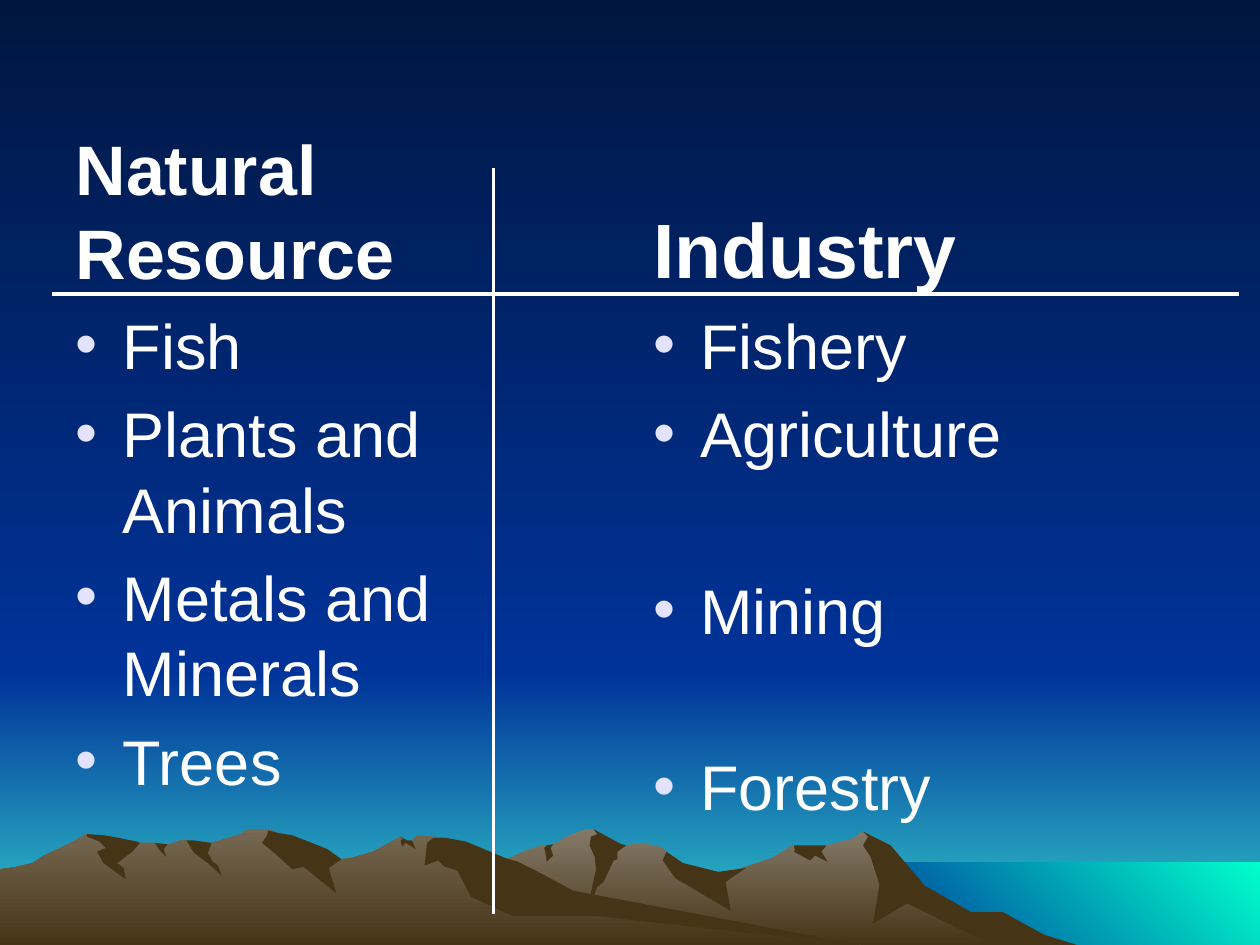
import pptx
import pptx.util
import pptx.dml.color
import pptx.enum.shapes
import pptx.enum.text
import pptx.oxml
import lxml.etree

Pt = pptx.util.Pt
WIDE, HIGH = 720, 540
ROCK = "463416"
UNIT = 0.72  # outlines are drawn on a grid of 0.72 points

# Outlines as x, y, x, y, ... on the grid; far peaks, then near ridge
FAR = [802, 740, 778, 727, 764, 723, 723, 698, 702, 671, 685, 660, 676, 666,
       656, 671, 629, 671, 613, 681, 566, 697, 536, 690, 529, 676, 526, 673,
       509, 669, 486, 673, 474, 661, 471, 658, 465, 658, 450, 664, 438, 671,
       430, 671, 418, 675, 405, 681, 394, 685, 355, 698, 327, 709, 277, 739,
       258, 751, 821, 751]
FAR_SHADE = [
    [796, 724, 771, 724, 734, 703, 707, 671, 685, 660, 689, 664, 685, 671,
     691, 680, 698, 702, 693, 733, 720, 717, 792, 752, 858, 751, 829, 742],
    [471, 658, 474, 662, 469, 664, 468, 671, 472, 680, 473, 690, 465, 727,
     474, 704, 479, 700, 487, 683, 490, 682, 490, 676, 497, 671, 493, 670],
    [529, 676, 526, 683, 536, 697, 580, 723, 576, 700, 592, 689, 570, 692,
     542, 685],
    [650, 671, 630, 671, 631, 675, 630, 676, 643, 683, 647, 679, 657, 684,
     652, 676, 656, 671],
    [433, 677, 432, 673, 434, 671, 439, 670, 437, 673, 439, 679, 434, 684],
]
NEAR = [690, 751, 667, 748, 432, 712, 354, 665, 331, 663, 327, 668, 323, 668,
        318, 664, 296, 676, 279, 681, 271, 682, 260, 676, 236, 681, 223, 663,
        219, 660, 212, 658, 196, 658, 191, 662, 178, 666, 168, 669, 160, 671,
        148, 667, 143, 667, 132, 671, 123, 669, 111, 669, 94, 671, 68, 662,
        56, 669, 46, 674, 35, 679, 26, 685, 14, 688, 0, 690, 0, 751]
NEAR_SHADE = [
    [212, 663, 208, 669, 219, 678, 232, 690, 241, 688, 267, 709, 261, 689,
     271, 682, 260, 674, 245, 668, 232, 663, 220, 661, 213, 659],
    [370, 668, 354, 665, 344, 665, 339, 669, 337, 687, 348, 683, 353, 688,
     363, 691, 374, 712, 407, 727, 472, 727, 690, 751, 683, 750, 455, 707,
     427, 692, 411, 684, 401, 681],
    [318, 667, 320, 666, 318, 664, 323, 667, 327, 667, 330, 674, 322, 669,
     319, 672],
    [154, 667, 168, 669, 165, 677, 169, 684, 173, 687, 176, 695, 165, 685,
     154, 677, 148, 667],
    [133, 670, 130, 674, 132, 680, 127, 675, 123, 669],
    [109, 668, 111, 669, 105, 676, 93, 685, 98, 689, 100, 698, 82, 685,
     77, 676, 84, 673, 79, 668, 69, 664, 69, 662, 83, 663, 94, 665],
]


def hue(code):
    return pptx.dml.color.RGBColor.from_string(code)


def paint(fill, codes, angle=270):
    """One colour gives a solid fill, two give a gradient."""
    if isinstance(codes, str):
        fill.solid()
        fill.fore_color.rgb = hue(codes)
        return
    fill.gradient()
    fill.gradient_angle = angle
    for stop, code in zip(fill.gradient_stops, codes):
        stop.color.rgb = hue(code)


def finish(shape, codes, angle=270):
    paint(shape.fill, codes, angle)
    shape.line.fill.background()
    shape.shadow.inherit = False


def panel(slide, box, codes, angle=270):
    kind = pptx.enum.shapes.MSO_SHAPE.RECTANGLE
    finish(slide.shapes.add_shape(kind, *map(Pt, box)), codes, angle)


def rock(slide, left, top, grid, codes):
    spots = list(zip(grid[::2], grid[1::2]))
    pen = slide.shapes.build_freeform(*spots[0], scale=Pt(UNIT))
    pen.add_line_segments(spots[1:], close=True)
    finish(pen.convert_to_shape(Pt(left), Pt(top)), codes)


def scene(slide, left, top, width, height):
    # Sky in two bands, then the sea
    split = 384
    panel(slide, (left, top + split, width, height - split),
          ("003399", "33CCCC"))
    panel(slide, (left, top, width, split), ("001640", "003399"))
    panel(slide, (left + 492, top + 493, width - 492, height - 493),
          ("003399", "00FFCC"), 45)
    # Mountains with their shaded sides
    for ridge, light, shades in ((FAR, "857A6A", FAR_SHADE),
                                 (NEAR, "766852", NEAR_SHADE)):
        rock(slide, left, top, ridge, (light, ROCK))
        for shade in shades:
            rock(slide, left, top, shade, ROCK)


def place(shape, box):
    shape.left, shape.top, shape.width, shape.height = map(Pt, box)
    shape.element.getparent().append(shape.element)  # above the scenery
    shape.text_frame.word_wrap = True
    shape.text_frame.auto_size = pptx.enum.text.MSO_AUTO_SIZE.NONE


def style(para, size, bold):
    para.font.name = "Arial"
    para.font.size = Pt(size)
    para.font.bold = bold
    para.font.color.rgb = hue("FFFFFF")


def tint(para, code):
    """Colour the bullet that the placeholder supplies."""
    tag = pptx.oxml.ns.qn
    mark = lxml.etree.SubElement(para._p.get_or_add_pPr(), tag("a:buClr"))
    lxml.etree.SubElement(mark, tag("a:srgbClr"), val=code)


def column(head, body, box, title, size, items, gaps):
    """Heading above a bulleted list; gaps maps an item to its space before."""
    left, top, width, height = box
    cap = 50.4
    place(head, (left, top, width, cap))
    head.text_frame.text = title
    style(head.text_frame.paragraphs[0], size, True)
    place(body, (left, top + cap, width, height - cap))
    body.text_frame.text = "\n".join(items)
    for para in body.text_frame.paragraphs:
        style(para, 36, False)
        if para.text in gaps:
            para.space_before = Pt(gaps[para.text])
        tint(para, "E3E3FF")


def rule(slide, *ends):
    kind = pptx.enum.shapes.MSO_CONNECTOR.STRAIGHT
    line = slide.shapes.add_connector(kind, *map(Pt, ends))
    line.line.color.rgb = hue("FFFFFF")
    line.line.width = Pt(2)
    lxml.etree.SubElement(line._element.spPr, pptx.oxml.ns.qn("a:effectLst"))


def main():
    deck = pptx.Presentation()
    deck.slide_width, deck.slide_height = Pt(WIDE), Pt(HIGH)
    slide = deck.slides.add_slide(deck.slide_layouts.get_by_name("Comparison"))
    paint(slide.background.fill, ("00246D", "003399"))
    title, *parts = slide.placeholders
    title.element.getparent().remove(title.element)
    scene(slide, 0, 0, WIDE, HIGH)

    # Two columns, equally far from the slide's sides
    edge, top, width, height = 36, 121, 318, 361.4
    column(*parts[:2], (edge, top, width, height), "Natural Resource", 40,
           ["Fish", "Plants and Animals", "Metals and Minerals", "Trees"], {})
    column(*parts[2:], (WIDE - edge - width, top, width, height),
           "Industry", 44, ["Fishery", "Agriculture", "Mining", "Forestry"],
           {"Mining": 57.7, "Forestry": 57.7})

    # Cross lines of the chart
    rule(slide, 30, 168, 708, 168)
    rule(slide, 282, 96, 282, 522)
    deck.save("out.pptx")


if __name__ == "__main__":
    main()
